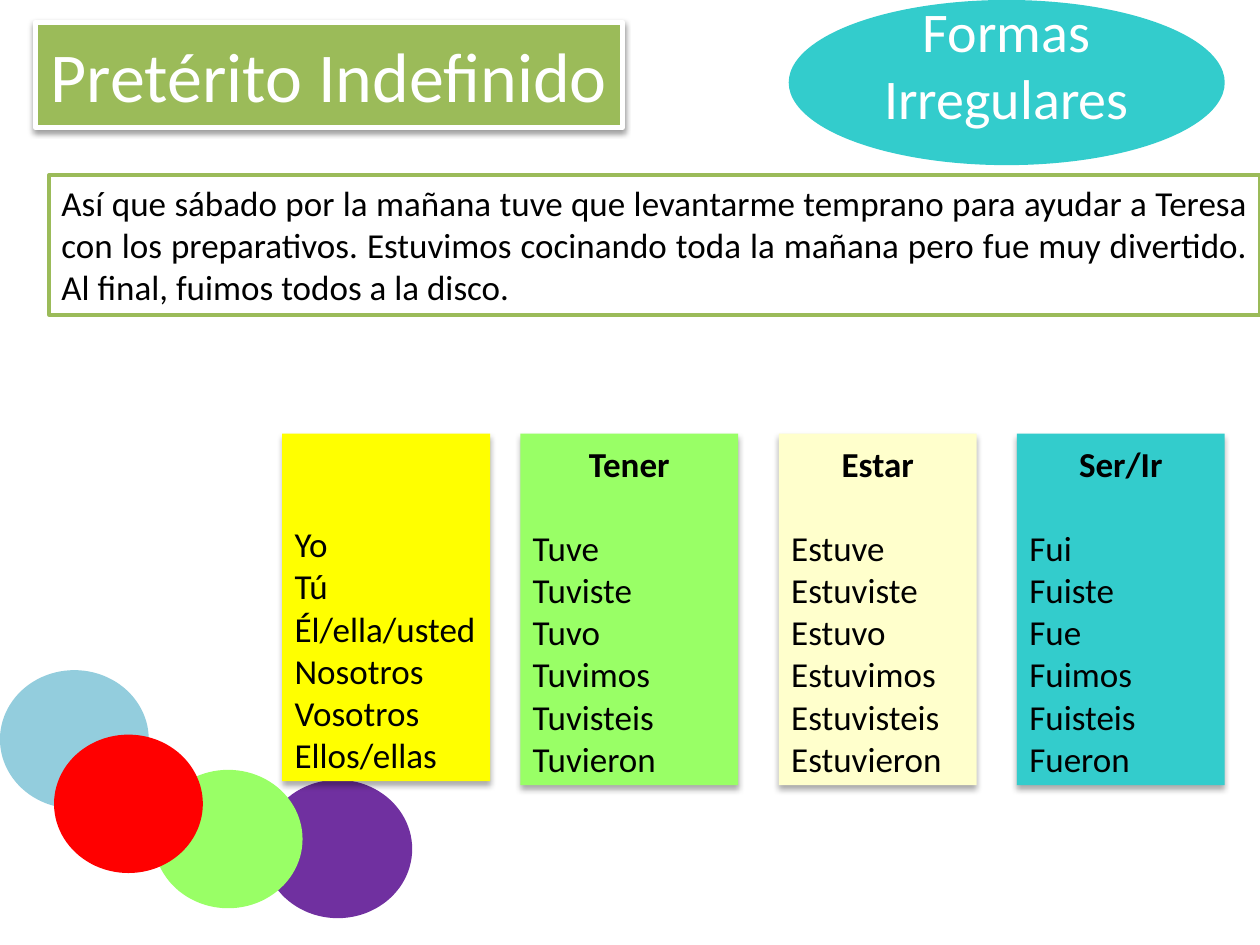
from lxml import etree
from pptx import Presentation
from pptx.dml.color import RGBColor
from pptx.enum.shapes import MSO_SHAPE
from pptx.enum.text import MSO_ANCHOR, MSO_AUTO_SIZE, PP_ALIGN
from pptx.oxml.ns import qn
from pptx.util import Cm, Pt

RECT, OVAL, CIRCLE = MSO_SHAPE.RECTANGLE, MSO_SHAPE.OVAL, MSO_SHAPE.FLOWCHART_CONNECTOR
LEFT, CENTER, JUSTIFY = PP_ALIGN.LEFT, PP_ALIGN.CENTER, PP_ALIGN.JUSTIFY
TOP, MIDDLE, BOTTOM = MSO_ANCHOR.TOP, MSO_ANCHOR.MIDDLE, MSO_ANCHOR.BOTTOM
FIT, FIXED = MSO_AUTO_SIZE.SHAPE_TO_FIT_TEXT, MSO_AUTO_SIZE.NONE

WHITE = RGBColor(0xFF, 0xFF, 0xFF)
BLACK = RGBColor(0, 0, 0)
OLIVE = RGBColor(0x9B, 0xBB, 0x59)
TURQUOISE = RGBColor(0x33, 0xCC, 0xCC)
SKY = RGBColor(0x93, 0xCD, 0xDD)
PURPLE = RGBColor(0x70, 0x30, 0xA0)
LIME = RGBColor(0x99, 0xFF, 0x66)
RED = RGBColor(0xFF, 0, 0)
YELLOW = RGBColor(0xFF, 0xFF, 0)
CREAM = RGBColor(0xFF, 0xFF, 0xCC)

STORY = (
    "Así que sábado por la mañana tuve que levantarme temprano para ayudar a Teresa "
    "con los preparativos. Estuvimos cocinando toda la mañana pero fue muy divertido. "
    "Al final, fuimos todos a la disco."
)
COLUMNS = [
    (0, 4.19, 7.01, YELLOW, None,
     ["Yo", "Tú", "Él/ella/usted", "Nosotros", "Vosotros", "Ellos/ellas"]),
    (4.8, 4.39, 7.09, LIME, "Tener",
     ["Tuve", "Tuviste", "Tuvo", "Tuvimos", "Tuvisteis", "Tuvieron"]),
    (10.01, 3.99, 7.09, CREAM, "Estar",
     ["Estuve", "Estuviste", "Estuvo", "Estuvimos", "Estuvisteis", "Estuvieron"]),
    (14.81, 4.19, 7.09, TURQUOISE, "Ser/Ir",
     ["Fui", "Fuiste", "Fue", "Fuimos", "Fuisteis", "Fueron"]),
]
CIRCLES = [(0, 0, SKY), (5.31, 2.21, PURPLE), (3.1, 2.01, LIME), (1.09, 1.3, RED)]


def paint(s, fill, line=None, width=0):
    s.shadow.inherit = False
    s.fill.solid()
    s.fill.fore_color.rgb = fill
    if line is None:
        s.line.fill.background()
    else:
        s.line.color.rgb = line
        s.line.width = Pt(width)


def add_box(shapes, kind, box, fill, line=None, width=0):
    s = shapes.add_shape(kind, *map(Cm, box))
    paint(s, fill, line, width)
    return s


def drop_shadow(s, alpha, blur, distance):
    effects = s._element.spPr.find(qn("a:effectLst"))
    outer = etree.SubElement(
        effects, qn("a:outerShdw"), blurRad=str(Pt(blur)), dist=str(Pt(distance)),
        dir="5400000", rotWithShape="0")
    color = etree.SubElement(outer, qn("a:srgbClr"), val="000000")
    etree.SubElement(color, qn("a:alpha"), val=str(alpha * 1000))


def set_frame(s, anchor=MIDDLE, wrap=True, fit=FIXED):
    tf = s.text_frame
    tf.word_wrap = wrap
    tf.auto_size = fit
    tf.vertical_anchor = anchor
    return tf


def write(tf, text, size=20, color=BLACK, bold=False, align=LEFT, before=0):
    p = tf.paragraphs[0] if not tf.text else tf.add_paragraph()
    p.alignment = align
    p.space_before = Pt(before)
    r = p.add_run()
    r.text = text
    r.font.name = "Calibri"
    r.font.size = Pt(size)
    r.font.bold = bold
    r.font.color.rgb = color


def place_title(slide, box):
    s = slide.shapes.title
    s.left, s.top, s.width, s.height = map(Cm, box)
    paint(s, OLIVE, WHITE, 3)
    drop_shadow(s, 38, 3.1, 1.6)
    tf = set_frame(s, wrap=False, fit=FIT)
    write(tf, "Pretérito Indefinido", size=40, color=WHITE, align=CENTER)


def add_topic(slide, box):
    s = add_box(slide.shapes, OVAL, box, TURQUOISE)
    tf = set_frame(s)
    tf.margin_bottom = Cm(0.9)
    write(tf, "Formas Irregulares", size=32, color=WHITE, align=CENTER)


def add_circles(slide, box):
    left, top, width, height = box
    group = slide.shapes.add_group_shape()
    for dx, dy, color in CIRCLES:
        add_box(group.shapes, CIRCLE, (left + dx, top + dy, width, height), color)


def add_story(slide, box):
    s = add_box(slide.shapes, RECT, box, WHITE, OLIVE, 2)
    write(set_frame(s, anchor=TOP, fit=FIT), STORY, align=JUSTIFY)


def add_conjugation(slide, left, top):
    for dx, width, height, color, verb, forms in COLUMNS:
        s = add_box(slide.shapes, RECT, (left + dx, top, width, height), color)
        drop_shadow(s, 32, 3.5, 2.2)
        tf = set_frame(s, anchor=BOTTOM)
        if verb:
            write(tf, verb, bold=True, align=CENTER)
        for i, form in enumerate(forms):
            write(tf, form, before=24 if verb and i == 0 else 0)


def main():
    prs = Presentation()
    prs.slide_width, prs.slide_height = Cm(25.4), Cm(19.05)
    slide = prs.slides.add_slide(prs.slide_layouts[5])
    place_title(slide, (0.71, 0.53, 11.84, 1.96))
    add_topic(slide, (15.9, 0, 8.79, 3.33))
    add_circles(slide, (0, 13.51, 3, 2.79))
    add_story(slide, (0.99, 3.53, 24.41, 2.82))
    add_conjugation(slide, 5.69, 8.74)
    prs.save("out.pptx")


if __name__ == "__main__":
    main()
